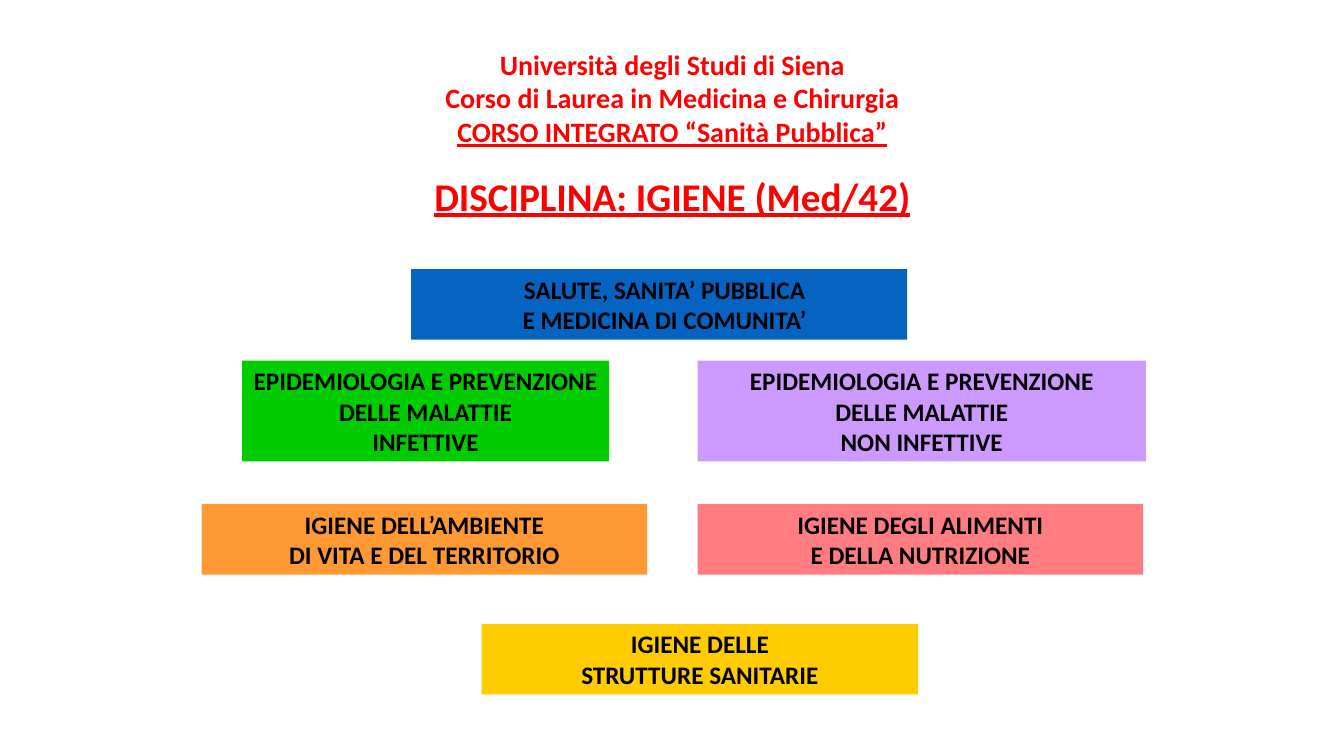
from pptx import Presentation
from pptx.dml.color import RGBColor
from pptx.enum.shapes import MSO_SHAPE
from pptx.enum.text import MSO_ANCHOR, PP_ALIGN
from pptx.util import Cm, Pt


def color(hex_value):
    return RGBColor.from_string(hex_value)


class CourseSlide:
    font_name = "Calibri"
    red, black = "FF0000", "000000"
    padding, line_height = 0.26, 0.76

    def __init__(self, presentation):
        self.slide = presentation.slides.add_slide(presentation.slide_layouts[6])

    def format_frame(self, frame, **values):
        for name, value in values.items():
            setattr(frame, name, value)

    def format_paragraph(self, paragraph, hex_value, size, **values):
        paragraph.alignment = PP_ALIGN.CENTER
        style = {"name": self.font_name, "size": Pt(size), "bold": True, **values}
        for run in paragraph.runs:
            for name, value in style.items():
                setattr(run.font, name, value)
            run.font.color.rgb = color(hex_value)

    def heading(self, left, top, width, height, lines):
        box = self.slide.shapes.add_textbox(Cm(left), Cm(top), Cm(width), Cm(height))
        frame = box.text_frame
        self.format_frame(frame, word_wrap=True, margin_top=Cm(0.07),
                          vertical_anchor=MSO_ANCHOR.TOP)
        frame.text = "\n".join(text for text, *_ in lines)
        for paragraph, (_, size, underline, gap) in zip(frame.paragraphs, lines):
            self.format_paragraph(paragraph, self.red, size, underline=underline)
            if gap:
                paragraph.space_before = Pt(gap)

    def topic(self, left, top, width, fill, lines, indent=0.25):
        height = self.padding + self.line_height * len(lines)
        block = self.slide.shapes.add_shape(
            MSO_SHAPE.RECTANGLE, Cm(left), Cm(top), Cm(width), Cm(height))
        block.shadow.inherit = False
        block.fill.solid()
        block.fill.fore_color.rgb = color(fill)
        block.line.fill.background()
        frame = block.text_frame
        self.format_frame(frame, word_wrap=True, margin_left=Cm(indent),
                          vertical_anchor=MSO_ANCHOR.TOP)
        frame.text = "\n".join(lines)
        for paragraph in frame.paragraphs:
            self.format_paragraph(paragraph, self.black, 18)


def main():
    presentation = Presentation()
    presentation.slide_width, presentation.slide_height = Cm(33.87), Cm(19.05)
    course = CourseSlide(presentation)

    # University, degree course and discipline
    course.heading(6.15, 1.12, 21.59, 3.18, [
        ("Università degli Studi di Siena", 20, False, 0),
        ("Corso di Laurea in Medicina e Chirurgia", 20, False, 0),
        ("CORSO INTEGRATO “Sanità Pubblica”", 20, True, 0),
        ("DISCIPLINA: IGIENE (Med/42)", 28, True, 17),
    ])

    # Opening topic
    course.topic(10.46 - 0.1, 6.78, 12.5, "0563C1",
                 ["SALUTE, SANITA’ PUBBLICA", "E MEDICINA DI COMUNITA’"], indent=0.53)

    # Paired topics
    right_column = 17.58
    diseases_top, hygiene_top = 9.09, 12.7
    epidemiology = ["EPIDEMIOLOGIA E PREVENZIONE", "DELLE MALATTIE"]
    course.topic(6.1, diseases_top, 9.25, "00CC00", epidemiology + ["INFETTIVE"])
    course.topic(right_column, diseases_top, 11.3, "CC99FF",
                 epidemiology + ["NON INFETTIVE"])
    course.topic(5.08, hygiene_top, 11.23, "FF9933",
                 ["IGIENE DELL’AMBIENTE", "DI VITA E DEL TERRITORIO"])
    course.topic(right_column, hygiene_top, 11.23, "FF7C80",
                 ["IGIENE DEGLI ALIMENTI", "E DELLA NUTRIZIONE"])

    # Closing topic
    course.topic(12.14, 15.72, 11, "FFCC00", ["IGIENE DELLE", "STRUTTURE SANITARIE"])

    presentation.save("out.pptx")


if __name__ == "__main__":
    main()
